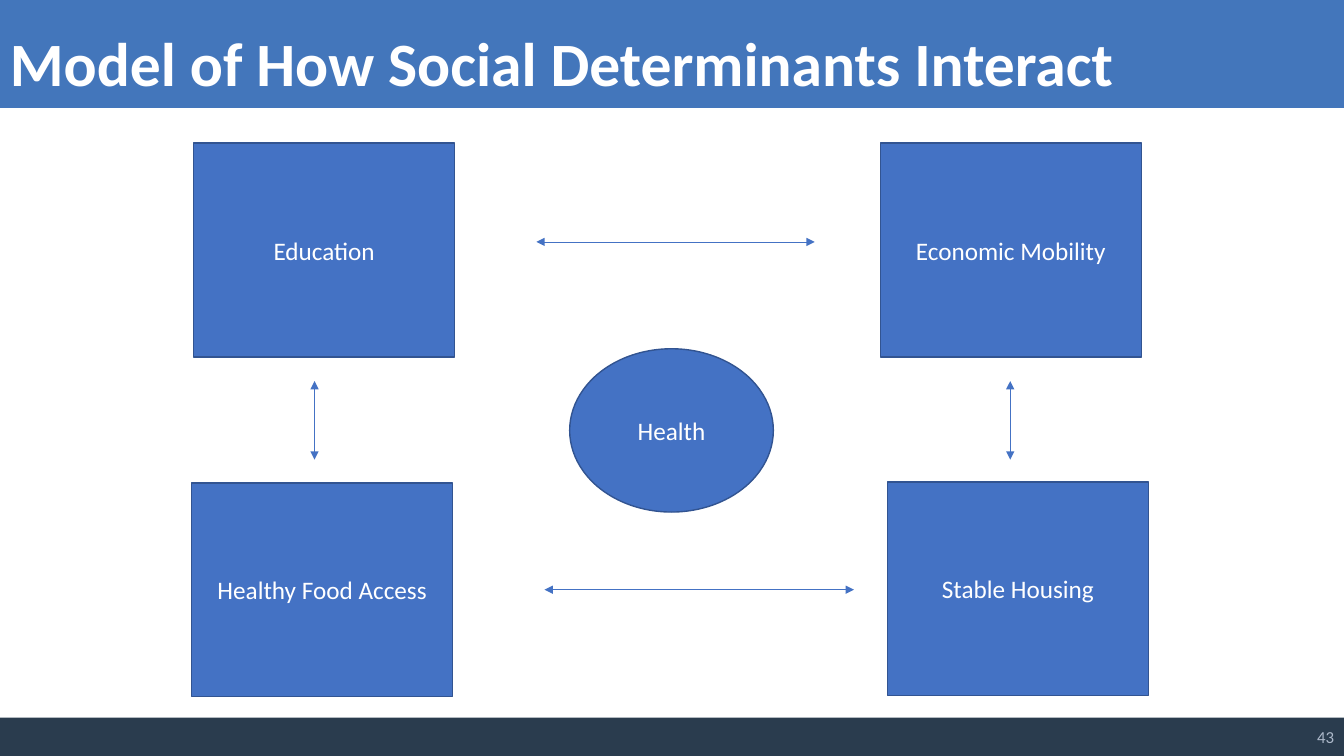
from dataclasses import dataclass

import lxml.etree
import pptx
import pptx.dml.color
import pptx.enum.shapes
import pptx.enum.text
import pptx.oxml.ns
import pptx.presentation
import pptx.shapes.base
import pptx.slide
import pptx.util

Inches = pptx.util.Inches
Align = pptx.enum.text.PP_ALIGN
Anchor = pptx.enum.text.MSO_ANCHOR
Preset = pptx.enum.shapes.MSO_SHAPE

COLORS = {
    "white": "FFFFFF",
    "header": "4376BB",
    "footer": "2A3C4E",
    "node": "4472C4",
    "node_edge": "325491",
    "page_number": "ADB9CA",
}
FONT = "Calibri"
SLIDE_WIDTH, SLIDE_HEIGHT = 13.33, 7.5


@dataclass(frozen=True)
class Box:
    left: float
    top: float
    width: float
    height: float

    def lengths(self) -> list[pptx.util.Length]:
        return [Inches(v) for v in (self.left, self.top, self.width, self.height)]


@dataclass(frozen=True)
class Determinant:
    label: str
    left: float
    top: float
    width: float = 2.59
    height: float = 2.12
    preset: Preset = Preset.RECTANGLE


@dataclass(frozen=True)
class Interaction:
    start: tuple[float, float]
    end: tuple[float, float]


DETERMINANTS = [
    Determinant("Education", 1.92, 1.42),
    Determinant("Economic Mobility", 8.73, 1.42),
    Determinant("Healthy Food Access", 1.9, 4.79),
    Determinant("Stable Housing", 8.8, 4.78),
    Determinant("Health", 5.65, 3.46, 2.02, 1.62, Preset.OVAL),
]

INTERACTIONS = [
    Interaction((5.32, 2.4), (8.08, 2.4)),
    Interaction((10.02, 3.78), (10.02, 4.56)),
    Interaction((8.47, 5.85), (5.4, 5.85)),
    Interaction((3.12, 3.78), (3.12, 4.56)),
]


def rgb(name: str) -> pptx.dml.color.RGBColor:
    return pptx.dml.color.RGBColor.from_string(COLORS[name])


def write_text(shape: pptx.shapes.base.BaseShape, text: str, *, size: float = 18,
               color: str = "white", bold: bool = False,
               align: Align = Align.CENTER, anchor: Anchor = Anchor.MIDDLE) -> None:
    frame = shape.text_frame
    frame.word_wrap = True
    frame.vertical_anchor = anchor
    paragraph = frame.paragraphs[0]
    paragraph.alignment = align
    run = paragraph.add_run()
    run.text = text
    run.font.name = FONT
    run.font.size = pptx.util.Pt(size)
    run.font.bold = bold
    run.font.color.rgb = rgb(color)


def draw_shape(slide: pptx.slide.Slide, box: Box, fill: str, edge: str | None = None,
               preset: Preset = Preset.RECTANGLE) -> pptx.shapes.base.BaseShape:
    shape = slide.shapes.add_shape(preset, *box.lengths())
    shape.shadow.inherit = False
    shape.fill.solid()
    shape.fill.fore_color.rgb = rgb(fill)
    if edge:
        shape.line.color.rgb = rgb(edge)
        shape.line.width = pptx.util.Pt(1)
    else:
        shape.line.fill.background()
    return shape


def draw_determinant(slide: pptx.slide.Slide, item: Determinant) -> None:
    box = Box(item.left, item.top, item.width, item.height)
    write_text(draw_shape(slide, box, "node", "node_edge", item.preset), item.label)


def draw_interaction(slide: pptx.slide.Slide, item: Interaction) -> None:
    """Draw a thin line with an arrowhead at both ends."""
    arrow = slide.shapes.add_connector(
        pptx.enum.shapes.MSO_CONNECTOR.STRAIGHT,
        *(Inches(v) for v in item.start + item.end))
    arrow.line.color.rgb = rgb("node")
    arrow.line.width = pptx.util.Pt(0.5)
    outline = arrow.line._get_or_add_ln()
    for end in ("a:headEnd", "a:tailEnd"):
        lxml.etree.SubElement(outline, pptx.oxml.ns.qn(end), type="triangle")
    lxml.etree.SubElement(arrow._element.spPr, pptx.oxml.ns.qn("a:effectLst"))


def main() -> None:
    deck = pptx.Presentation()
    deck.slide_width, deck.slide_height = Inches(SLIDE_WIDTH), Inches(SLIDE_HEIGHT)
    slide = deck.slides.add_slide(deck.slide_layouts[6])

    draw_shape(slide, Box(0, 0, SLIDE_WIDTH, 1.07), "header")
    draw_shape(slide, Box(0, 7.12, SLIDE_WIDTH, 0.38), "footer")
    for determinant in DETERMINANTS:
        draw_determinant(slide, determinant)
    for interaction in INTERACTIONS:
        draw_interaction(slide, interaction)

    title = slide.shapes.add_textbox(*Box(0, 0.2, SLIDE_WIDTH, 0.84).lengths())
    write_text(title, "Model of How Social Determinants Interact", size=44, bold=True,
               align=Align.LEFT, anchor=Anchor.TOP)
    page_number = slide.shapes.add_textbox(*Box(10.34, 7.11, 2.99, 0.4).lengths())
    write_text(page_number, "43", size=12, color="page_number", align=Align.RIGHT)

    deck.save("out.pptx")


if __name__ == "__main__":
    main()
